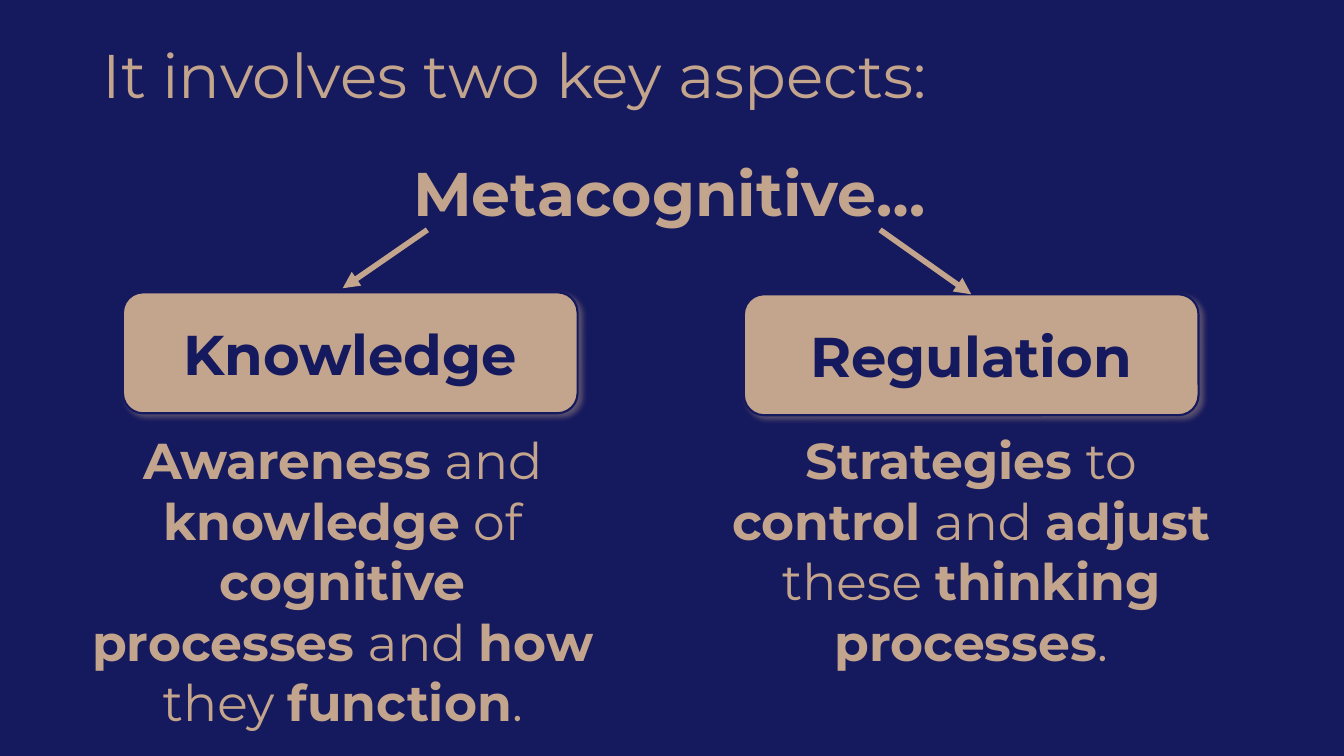
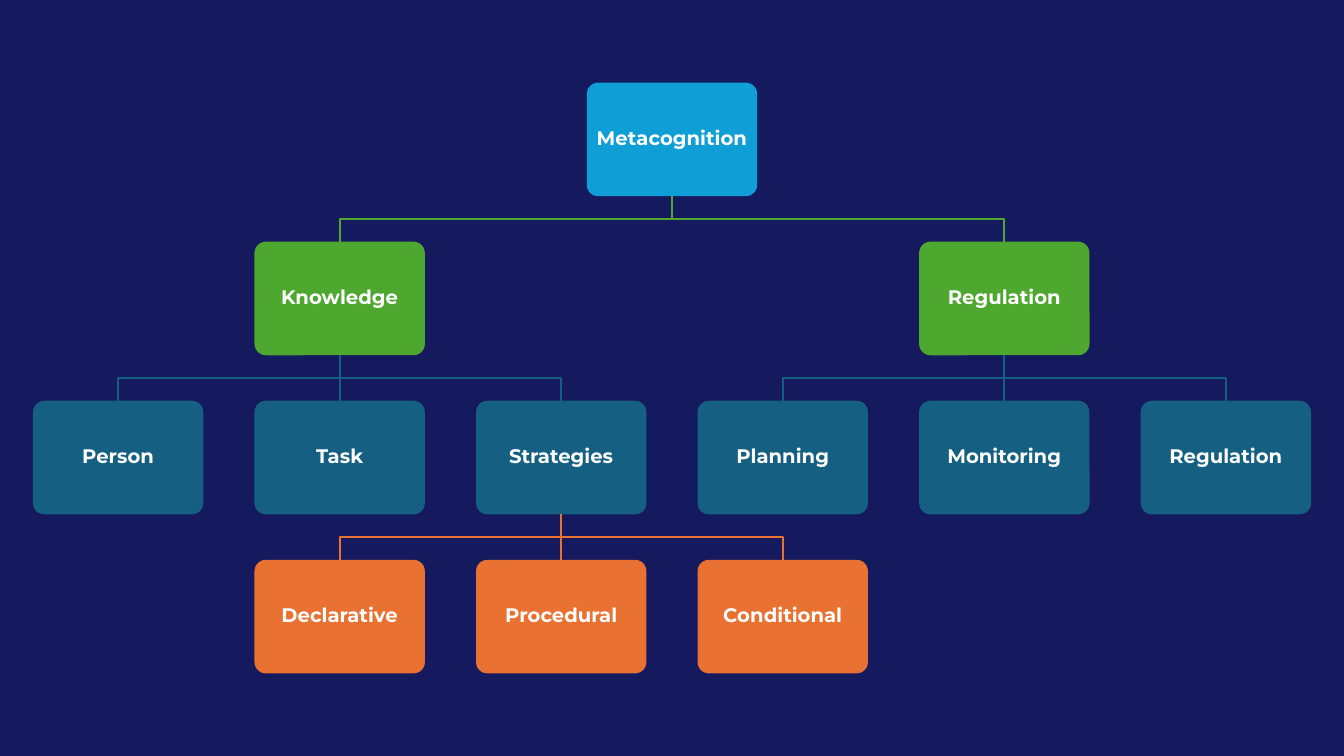
from lxml import etree
from pptx import Presentation
from pptx import util as u
from pptx.dml.color import RGBColor
from pptx.enum import shapes, text
from pptx.oxml import ns

NAVY, SAND, WHITE = "15195D", "C3A48C", "FFFFFF"
LEVEL_COLORS = ["0F9ED5", "4EA72E", "156082", "E97132"]
FONT = "Montserrat"


def color(value):
    return RGBColor.from_string(value)


def child(parent, tag, **attrs):
    return etree.SubElement(parent, ns.qn(tag), attrs)


class Deck:
    """Holds the style and the current slide; lengths are percent of the slide."""

    def __init__(self):
        self.prs = Presentation()
        self.prs.slide_width, self.prs.slide_height = u.Inches(13.33), u.Inches(7.5)
        fill = self.prs.slide_master.background.fill
        fill.solid()
        fill.fore_color.rgb = color(NAVY)

    def x(self, share):
        return round(self.prs.slide_width * share / 100)

    def y(self, share):
        return round(self.prs.slide_height * share / 100)

    def place(self, left, top, width, height):
        return self.x(left), self.y(top), self.x(width), self.y(height)

    def add_slide(self, title=None):
        layout = self.prs.slide_layouts[6 if title is None else 5]
        self.s = self.prs.slides.add_slide(layout)
        if title is None:
            return
        sp = self.s.shapes.title
        sp.left, sp.top, sp.width, sp.height = self.place(6.88, 5.33, 86.25, 19.33)
        tf = sp.text_frame
        tf.auto_size = text.MSO_AUTO_SIZE.NONE
        tf.vertical_anchor = text.MSO_ANCHOR.TOP
        p = self.set_text(tf, title, 44, SAND, align=text.PP_ALIGN.LEFT)
        p.line_spacing = 0.9

    def set_text(self, tf, words, size, ink, align=text.PP_ALIGN.CENTER):
        """Fill the first paragraph; words between asterisks are bold."""
        p = tf.paragraphs[0]
        p.alignment = align
        p.font.name, p.font.size = FONT, u.Pt(size)
        p.font.color.rgb = color(ink)
        for i, part in enumerate(words.split("*")):
            if part:
                r = p.add_run()
                r.text = part
                r.font.bold = i % 2 == 1
        return p

    def text_box(self, box, words, size, wrap=True, align=text.PP_ALIGN.CENTER):
        tf = self.s.shapes.add_textbox(*self.place(*box)).text_frame
        tf.word_wrap = wrap
        tf.auto_size = text.MSO_AUTO_SIZE.SHAPE_TO_FIT_TEXT
        self.set_text(tf, words, size, SAND, align)

    def round_box(self, box, fill):
        sp = self.s.shapes.add_shape(
            shapes.MSO_SHAPE.ROUNDED_RECTANGLE, *self.place(*box))
        sp.shadow.inherit = False
        sp.fill.solid()
        sp.fill.fore_color.rgb = color(fill)
        sp.line.fill.background()
        sp.text_frame.vertical_anchor = text.MSO_ANCHOR.MIDDLE
        return sp

    def heading_box(self, box, label):
        sp = self.round_box(box, SAND)
        self.style_line(sp, NAVY, 1.5)
        self.set_text(sp.text_frame, f"*{label}*", 40, NAVY)
        # Soft sand-coloured shadow
        effects = sp.element.spPr.find(ns.qn("a:effectLst"))
        shadow = child(effects, "a:outerShdw", blurRad=str(u.Pt(4)),
                       dist=str(u.Pt(3)), dir="2700000", algn="tl", rotWithShape="0")
        child(child(shadow, "a:srgbClr", val=SAND), "a:alpha", val="40000")
        return sp

    def node(self, box, label, fill):
        sp = self.round_box(box, fill)
        sp.adjustments[0] = 0.1
        tf = sp.text_frame
        tf.margin_left = tf.margin_right = u.Inches(0.06)
        tf.margin_top = tf.margin_bottom = u.Inches(0.1)
        p = self.set_text(tf, f"*{label}*", 14, WHITE)
        p.line_spacing, p.space_after = 0.9, u.Pt(5)
        return sp

    def style_line(self, sp, ink, width):
        sp.line.color.rgb = color(ink)
        sp.line.width = u.Pt(width)

    def straight(self, start, end, ink, width):
        c = self.s.shapes.add_connector(
            shapes.MSO_CONNECTOR.STRAIGHT,
            self.x(start[0]), self.y(start[1]), self.x(end[0]), self.y(end[1]))
        self.style_line(c, ink, width)
        child(c.element.spPr, "a:effectLst")
        return c

    def arrow(self, start, end):
        c = self.straight(start, end, SAND, 4)
        child(c.element.spPr.find(ns.qn("a:ln")), "a:tailEnd", type="triangle")
        return c

    def elbow(self, start, end, ink):
        middle = (start[1] + end[1]) / 2
        points = [start, (start[0], middle), (end[0], middle), end]
        first, *rest = [(self.x(a), self.y(b)) for a, b in points]
        builder = self.s.shapes.build_freeform(*first)
        builder.add_line_segments(rest, close=False)
        sp = builder.convert_to_shape()
        sp.shadow.inherit = False
        sp.fill.background()
        self.style_line(sp, ink, 1.5)


class Tree:
    """Hierarchy of equal boxes, six columns by four rows, centred on the slide."""
    COLS, ROWS = 6, 4
    W, H = 12.68, 15.03
    STEP_X, STEP_Y = 1.3 * W, 1.4 * H
    LEFT = (100 - (COLS - 1) * STEP_X - W) / 2
    TOP = (100 - (ROWS - 1) * STEP_Y - H) / 2

    def __init__(self, deck):
        self.deck = deck

    def draw(self, label, col, children=(), row=0):
        left, top = self.LEFT + col * self.STEP_X, self.TOP + row * self.STEP_Y
        sp = self.deck.node((left, top, self.W, self.H), label, LEVEL_COLORS[row])
        start = (left + self.W / 2, top + self.H)
        for branch in children:
            below = self.draw(*branch, row=row + 1)
            end = (start[0] + (branch[1] - col) * self.STEP_X, top + self.STEP_Y)
            ink = LEVEL_COLORS[row + 1]
            if branch[1] == col:
                c = self.deck.straight(start, end, ink, 1.5)
                c.begin_connect(sp, 2)
                c.end_connect(below, 0)
            else:
                self.deck.elbow(start, end, ink)
        return sp


HIERARCHY = ("Metacognition", 2.5, [
    ("Knowledge", 1, [
        ("Person", 0),
        ("Task", 1),
        ("Strategies", 2, [
            ("Declarative", 1), ("Procedural", 2), ("Conditional", 3)]),
    ]),
    ("Regulation", 4, [("Planning", 3), ("Monitoring", 4), ("Regulation", 5)]),
])


def main():
    deck = Deck()

    # Two aspects
    deck.add_slide("It involves two key aspects:")
    regulation = deck.heading_box((55.35, 38.93, 33.83, 16), "Regulation")
    deck.heading_box((9.15, 38.67, 33.83, 16), "Knowledge")
    deck.text_box((5.48, 56.13, 40.05, 41.73),
                  "*Awareness* and *knowledge* of *cognitive processes* and "
                  "*how* they *function*.", 36)
    deck.text_box((52.65, 56.13, 39.23, 33.6),
                  "*Strategies* to *control* and *adjust* these "
                  "*thinking processes*.", 36)
    deck.text_box((30, 19.87, 40.05, 11.2), "*Metacognitive…*", 44,
                  wrap=False, align=text.PP_ALIGN.LEFT)
    deck.arrow((65.48, 30.4), (72.26, 38.93)).end_connect(regulation, 0)
    deck.arrow((31.8, 30.4), (25.5, 38.13))

    # Hierarchy
    deck.add_slide()
    Tree(deck).draw(*HIERARCHY)

    deck.prs.save("out.pptx")


if __name__ == "__main__":
    main()
